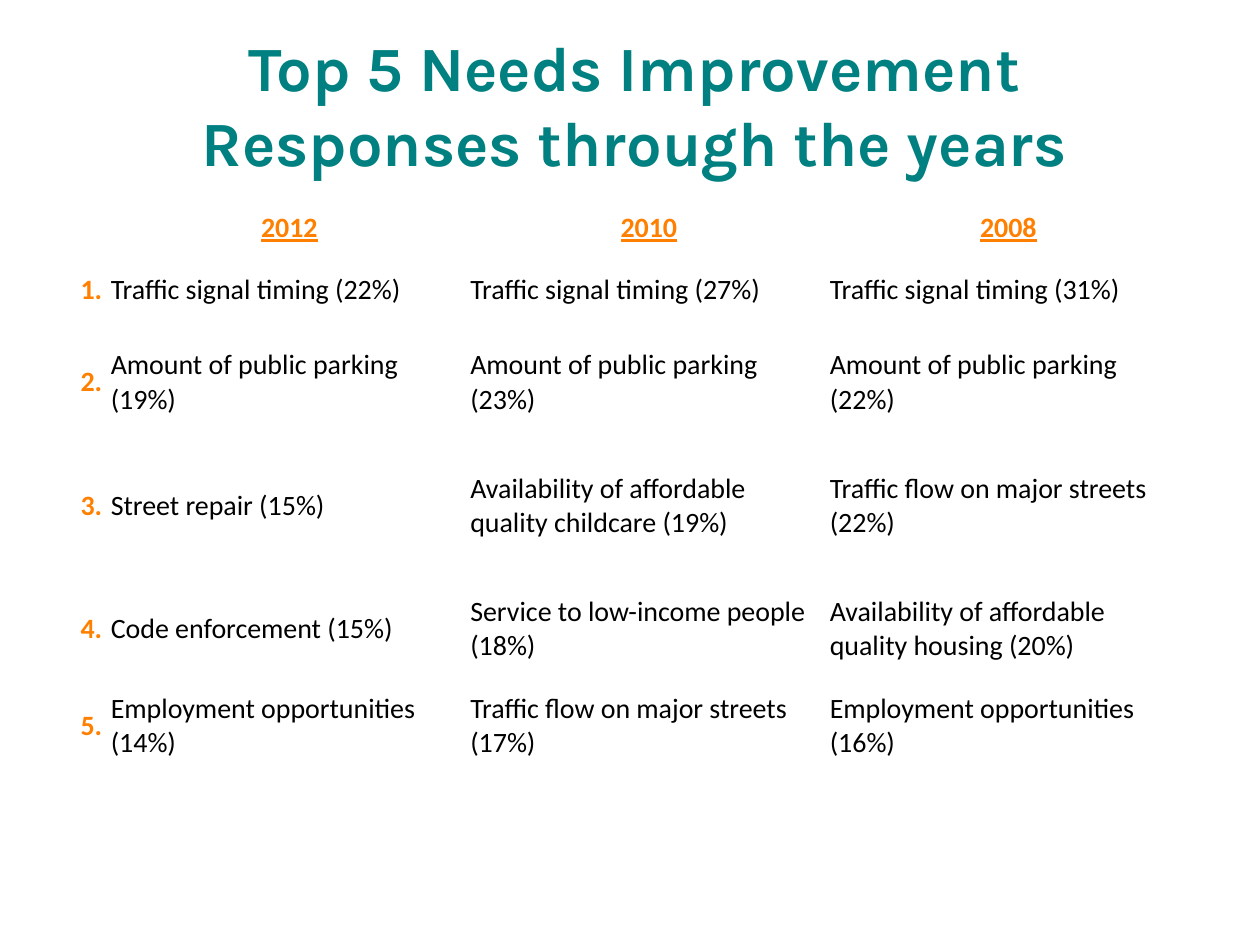
from dataclasses import dataclass

from pptx import Presentation
from pptx.dml.color import RGBColor
from pptx.enum.text import MSO_ANCHOR, PP_ALIGN
from pptx.util import Inches, Pt

MIDDLE = MSO_ANCHOR.MIDDLE
CENTER, LEFT = PP_ALIGN.CENTER, PP_ALIGN.LEFT


@dataclass(frozen=True)
class Theme:
    teal: RGBColor = RGBColor(0x00, 0x80, 0x80)
    orange: RGBColor = RGBColor(0xFF, 0x80, 0x00)
    black: RGBColor = RGBColor(0x00, 0x00, 0x00)
    head: str = "Karla"
    body: str = "Calibri"
    big: int = 36
    small: int = 16


THEME = Theme()
TITLE = "Top 5 Needs Improvement Responses through the years"
YEARS = ["2012", "2010", "2008"]
NEEDS = [
    ["Traffic signal timing (22%)", "Traffic signal timing (27%)",
     "Traffic signal timing (31%)"],
    ["Amount of public parking (19%)", "Amount of public parking (23%)",
     "Amount of public parking (22%)"],
    ["Street repair (15%)", "Availability of affordable quality childcare (19%)",
     "Traffic flow on major streets (22%)"],
    ["Code enforcement (15%)", "Service to low-income people (18%)",
     "Availability of affordable\nquality housing (20%)"],
    ["Employment opportunities (14%)", "Traffic flow on major streets (17%)",
     "Employment opportunities (16%)"],
]
RANK_WIDTH = 0.24
ROW_HEIGHTS = [0.49, 0.49, 0.98, 0.98, 0.98, 0.55]


def style(para, face, size, color, bold, align):
    para.alignment = align
    font = para.font
    font.name, font.size, font.bold = face, Pt(size), bold
    font.color.rgb = color


def add_title(slide, box):
    frame = slide.shapes.add_textbox(*map(Inches, box)).text_frame
    frame.word_wrap = True
    frame.vertical_anchor = MIDDLE
    frame.text = TITLE
    style(frame.paragraphs[0], THEME.head, THEME.big, THEME.teal, True, CENTER)


def fill_cell(cell, text, row, col):
    """Year headings and rank numbers are bold orange; needs are plain black."""
    cell.fill.background()
    cell.vertical_anchor = MIDDLE
    cell.margin_left = cell.margin_right = cell.margin_top = Inches(0.01)
    cell.margin_bottom = 0
    cell.text = text
    label = row == 0 or col == 0
    color = THEME.orange if label else THEME.black
    align = CENTER if row == 0 else LEFT
    for para in cell.text_frame.paragraphs:
        style(para, THEME.body, THEME.small, color, label, align)
        para.font.underline = row == 0


def add_ranks(slide, box):
    rows = [["", *YEARS]]
    rows += [[f"{rank}.", *needs] for rank, needs in enumerate(NEEDS, 1)]
    table = slide.shapes.add_table(
        len(rows), len(rows[0]), *map(Inches, box)).table
    table.first_row = table.horz_banding = False
    year_width = (box[2] - RANK_WIDTH) / len(YEARS)
    for col, column in enumerate(table.columns):
        column.width = Inches(year_width if col else RANK_WIDTH)
    for row, height in enumerate(ROW_HEIGHTS):
        table.rows[row].height = Inches(height)
        for col, text in enumerate(rows[row]):
            fill_cell(table.cell(row, col), text, row, col)


def main():
    deck = Presentation()
    deck.slide_width, deck.slide_height = Inches(10), Inches(7.5)
    slide = deck.slides.add_slide(deck.slide_layouts[6])
    add_title(slide, (1.39, 0.15, 7.29, 1.35))
    add_ranks(slide, (0.63, 1.56, 8.8, sum(ROW_HEIGHTS)))
    deck.save("out.pptx")


if __name__ == "__main__":
    main()
